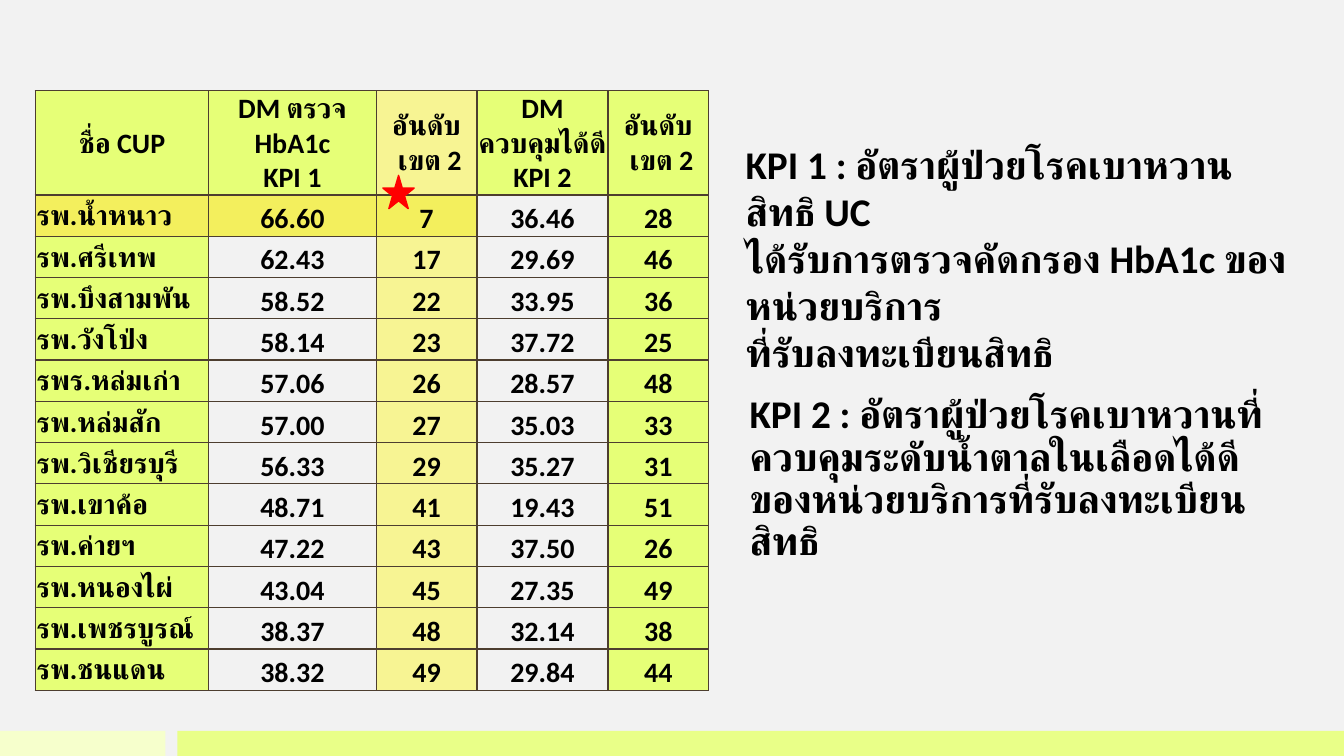
"""Build a slide that ranks hospitals by two diabetes care indicators."""
from lxml import etree
from pptx import Presentation
from pptx.dml.color import RGBColor
from pptx.enum.shapes import MSO_SHAPE
from pptx.enum.text import MSO_ANCHOR, PP_ALIGN
from pptx.oxml.ns import qn
from pptx.util import Cm, Pt

RECTANGLE, STAR = MSO_SHAPE.RECTANGLE, MSO_SHAPE.STAR_5_POINT
TOP, MIDDLE, BOTTOM = MSO_ANCHOR.TOP, MSO_ANCHOR.MIDDLE, MSO_ANCHOR.BOTTOM
LEFT, CENTER = PP_ALIGN.LEFT, PP_ALIGN.CENTER

COLORS = {
    "background": "F2F2F2",
    "pale_lime": "F6FFCC",
    "bright_lime": "E9FF88",
    "lime": "E6FF77",
    "sand": "F7F493",
    "highlight": "F3EF5D",
    "border": "4D3E2F",
    "text": "000000",
    "star": "FF0000",
}
COLUMN_WIDTHS = [4.37, 4.22, 2.54, 3.3, 2.54]
COLUMN_FILLS = ["lime", None, "sand", None, "lime"]
HEADER_FILLS = ["lime", "lime", "sand", "lime", "lime"]
HIGHLIGHT_FILLS = ["highlight", "highlight", "highlight", None, "lime"]
HEADINGS = ["ชื่อ CUP", "DM ตรวจ HbA1c\nKPI 1", "อันดับ\n เขต 2",
            "DM ควบคุมได้ดี\nKPI 2", "อันดับ\n เขต 2"]
HOSPITALS = [
    ["รพ.น้ำหนาว", "66.60", "7", "36.46", "28"],
    ["รพ.ศรีเทพ", "62.43", "17", "29.69", "46"],
    ["รพ.บึงสามพัน", "58.52", "22", "33.95", "36"],
    ["รพ.วังโป่ง", "58.14", "23", "37.72", "25"],
    ["รพร.หล่มเก่า", "57.06", "26", "28.57", "48"],
    ["รพ.หล่มสัก", "57.00", "27", "35.03", "33"],
    ["รพ.วิเชียรบุรี", "56.33", "29", "35.27", "31"],
    ["รพ.เขาค้อ", "48.71", "41", "19.43", "51"],
    ["รพ.ค่ายฯ", "47.22", "43", "37.50", "26"],
    ["รพ.หนองไผ่", "43.04", "45", "27.35", "49"],
    ["รพ.เพชรบูรณ์", "38.37", "48", "32.14", "38"],
    ["รพ.ชนแดน", "38.32", "49", "29.84", "44"],
]
KPI_TEXTS = [
    ("KPI 1 : อัตราผู้ป่วยโรคเบาหวาน สิทธิ UC\vได้รับการตรวจคัดกรอง HbA1c ของหน่วยบริการ"
     "\vที่รับลงทะเบียนสิทธิ", (18.54, 4.04, 14.53, 4.93), MIDDLE, 1.0, 0),
    ("KPI 2 : อัตราผู้ป่วยโรคเบาหวานที่ควบคุมระดับน้ำตาลในเลือดได้ดี "
     "ของหน่วยบริการที่รับลงทะเบียนสิทธิ", (18.64, 9.83, 13.61, 3.63), TOP, 0.9, 9),
]
DECORATIONS = [
    (RECTANGLE, "pale_lime", (0, 18.42, 4.17, 0.63)),
    (RECTANGLE, "bright_lime", (4.47, 18.42, 29.4, 0.63)),
    (STAR, "star", (9.65, 4.42, 0.79, 0.84)),
]


def rgb(name):
    return RGBColor.from_string(COLORS[name])


def write_bold(frame, text, size, alignment):
    frame.text = text
    for paragraph in frame.paragraphs:
        paragraph.alignment = alignment
        for run in paragraph.runs:
            run.font.size = Pt(size)
            run.font.bold = True
            run.font.name = "Calibri"
            run.font.color.rgb = rgb("text")
            etree.SubElement(run.font._element, qn("a:cs"), typeface="Calibri")


prs = Presentation()
prs.slide_width, prs.slide_height = Cm(33.87), Cm(19.05)
slide = prs.slides.add_slide(prs.slide_layouts[6])
slide.background.fill.solid()
slide.background.fill.fore_color.rgb = rgb("background")

ranking = slide.shapes.add_table(
    len(HOSPITALS) + 1, len(HEADINGS), Cm(0.89), Cm(2.29), Cm(16.97), Cm(14.54)).table
ranking.first_row = ranking.horz_banding = False
for column, width in zip(ranking.columns, COLUMN_WIDTHS):
    column.width = Cm(width)

for row_index, values in enumerate([HEADINGS] + HOSPITALS):
    ranking.rows[row_index].height = Cm(1.04 if row_index else 2.06)
    fills = {0: HEADER_FILLS, 1: HIGHLIGHT_FILLS}.get(row_index, COLUMN_FILLS)
    for column_index, (value, fill) in enumerate(zip(values, fills)):
        cell = ranking.cell(row_index, column_index)
        is_name = row_index > 0 and column_index == 0
        is_figure = row_index > 0 and column_index > 0
        write_bold(cell.text_frame, value, 20, LEFT if is_name else CENTER)
        cell.vertical_anchor = BOTTOM if is_figure else MIDDLE
        cell.margin_left = cell.margin_right = cell.margin_top = Cm(0.03)
        cell.margin_bottom = 0
        properties = cell._tc.get_or_add_tcPr()
        for side in ("a:lnL", "a:lnR", "a:lnT", "a:lnB"):
            border = etree.SubElement(properties, qn(side), w=str(Pt(1)))
            ink = etree.SubElement(border, qn("a:solidFill"))
            etree.SubElement(ink, qn("a:srgbClr"), val=COLORS["border"])
        if fill:
            cell.fill.solid()
            cell.fill.fore_color.rgb = rgb(fill)
        else:
            cell.fill.background()

for text, box, anchor, line_spacing, space_before in KPI_TEXTS:
    definition = slide.shapes.add_textbox(*map(Cm, box)).text_frame
    definition.word_wrap = True
    definition.vertical_anchor = anchor
    write_bold(definition, text, 28, LEFT)
    definition.paragraphs[0].line_spacing = line_spacing
    definition.paragraphs[0].space_before = Pt(space_before)

for outline, color, box in DECORATIONS:
    decoration = slide.shapes.add_shape(outline, *map(Cm, box))
    decoration.shadow.inherit = False
    decoration.fill.solid()
    decoration.fill.fore_color.rgb = rgb(color)
    if outline == STAR:
        decoration.line.color.rgb = rgb(color)
        decoration.line.width = Pt(1)
    else:
        decoration.line.fill.background()

prs.save("out.pptx")
